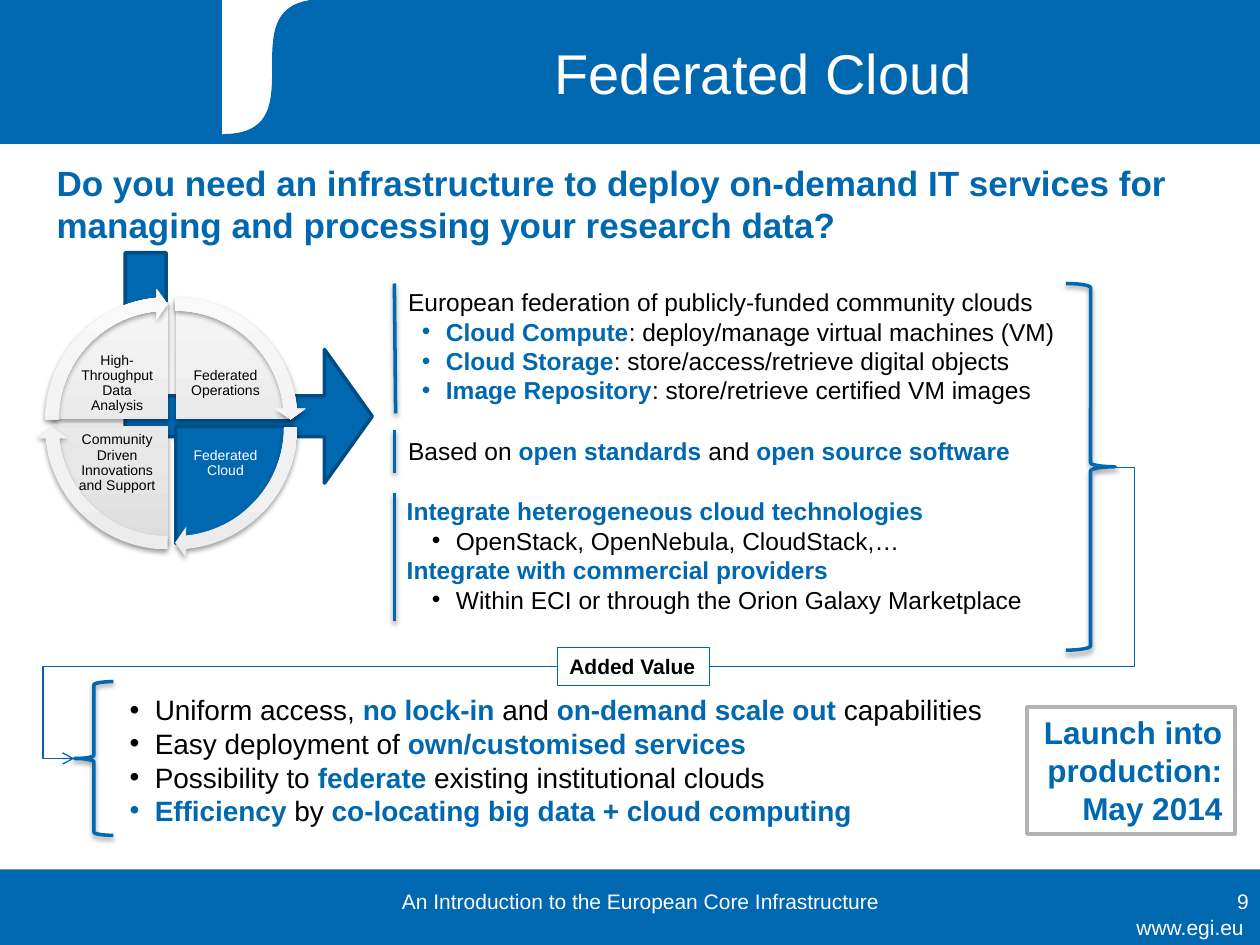
from dataclasses import dataclass

from lxml.etree import SubElement
from pptx import Presentation
from pptx.dml.color import RGBColor
from pptx.enum.shapes import MSO_CONNECTOR as CONN, MSO_SHAPE as SHAPE
from pptx.enum.text import MSO_ANCHOR as ANCHOR, PP_ALIGN as ALIGN
from pptx.oxml import parse_xml
from pptx.oxml.ns import nsdecls, qn
from pptx.util import Inches, Pt

COLORS = {"blue": "0067B1", "link": "0065AD", "navy": "004C83",
          "grey": "B3B3B3", "white": "FFFFFF", "black": "000000"}
WEDGE_GRADIENT = ((0, "DDDDDD"), (35, "E7E7E7"), (100, "F6F6F6"))
RING_GRADIENT = ((0, "ECECEC"), (35, "F1F1F1"), (100, "F9F9F9"))


@dataclass
class Wedge:
    label: str
    x: float
    y: float
    label_x: float
    label_y: float
    start: int  # angles in units of 100000/60000 degree
    end: int
    active: bool = False


@dataclass
class Block:
    lines: list
    x: float
    y: float
    w: float
    h: float
    size: int = 14
    indent: tuple = (0, 0)


def rgb(name: str) -> RGBColor:
    return RGBColor.from_string(COLORS[name])


def add_shadow(s) -> None:
    """Give a shape or connector a soft shadow straight below it."""
    effects = s._element.spPr.find(qn("a:effectLst"))
    if effects is None:
        effects = SubElement(s._element.spPr, qn("a:effectLst"))
    effects.append(parse_xml(
        f'<a:outerShdw {nsdecls("a")} blurRad="{Pt(3.1)}" dist="{Pt(1.6)}" dir="5400000" '
        'rotWithShape="0"><a:srgbClr val="000000"><a:alpha val="38000"/></a:srgbClr></a:outerShdw>'))


def style(s, fill=None, line=None, width=0.75, gradient=None, shadow=False):
    s.shadow.inherit = False
    if gradient:
        s.fill.gradient()
        stops = s._element.spPr.find(qn("a:gradFill")).find(qn("a:gsLst"))
        stops[:] = [parse_xml(f'<a:gs {nsdecls("a")} pos="{pos * 1000}"><a:srgbClr val="{color}"/></a:gs>')
                    for pos, color in gradient]
        s.fill.gradient_angle = 90
    elif fill:
        s.fill.solid()
        s.fill.fore_color.rgb = rgb(fill)
    else:
        s.fill.background()
    if line:
        s.line.color.rgb = rgb(line)
        s.line.width = Pt(width)
    else:
        s.line.fill.background()
    if shadow:
        add_shadow(s)
    return s


def add_shape(kind, x: float, y: float, w: float, h: float, adj=(), **fmt):
    s = slide.shapes.add_shape(kind, Inches(x), Inches(y), Inches(w), Inches(h))
    for i, value in enumerate(adj):
        s.adjustments[i] = value
    return style(s, **fmt)


def add_line(kind, x1: float, y1: float, x2: float, y2: float, color: str, width: float):
    c = slide.shapes.add_connector(kind, Inches(x1), Inches(y1), Inches(x2), Inches(y2))
    c.line.color.rgb = rgb(color)
    c.line.width = Pt(width)
    SubElement(c._element.spPr, qn("a:effectLst"))
    return c


def add_elbow(x1: float, y1: float, x2: float, y2: float, bend: float):
    c = add_line(CONN.ELBOW, x1, y1, x2, y2, "link", 0.75)
    guides = c._element.spPr.find(qn("a:prstGeom")).get_or_add_avLst()
    SubElement(guides, qn("a:gd"), name="adj1", fmla=f"val {round(bend * 100000)}")
    return c


def write(s, lines, size=14, color="black", bold=False, align=ALIGN.LEFT, anchor=ANCHOR.TOP,
          indent=(0, 0), inset=None, spacing=None, wrap=True) -> None:
    """Write paragraphs: *stars* mark bold blue text, a leading • makes a bullet."""
    tf = s.text_frame
    tf.word_wrap, tf.vertical_anchor = wrap, anchor
    if inset is not None:
        tf.margin_left = tf.margin_right = tf.margin_top = tf.margin_bottom = Inches(inset)
    for i, line in enumerate([lines] if isinstance(lines, str) else lines):
        p = tf.paragraphs[0] if i == 0 else tf.add_paragraph()
        if line.startswith("•"):
            pPr = p._p.get_or_add_pPr()
            pPr.set("marL", str(Inches(indent[0])))
            pPr.set("indent", str(Inches(indent[1])))
            SubElement(pPr, qn("a:buFont"), typeface="Arial")
            SubElement(pPr, qn("a:buChar"), char="•")
        p.alignment = align
        if spacing:
            p.line_spacing = spacing
        for j, part in enumerate(line.lstrip("•").split("*")):
            if part:
                r = p.add_run()
                r.text = part
                r.font.name, r.font.size = "Arial", Pt(size)
                r.font.bold = bold or j % 2 == 1
                r.font.color.rgb = rgb("blue" if j % 2 else color)


def add_text(lines, x: float, y: float, w: float, h: float, **fmt) -> None:
    write(slide.shapes.add_textbox(Inches(x), Inches(y), Inches(w), Inches(h)), lines, **fmt)


def bezier(p0, p1, p2, p3, steps=40):
    for t in (i / steps for i in range(steps + 1)):
        yield tuple((1 - t) ** 3 * a + 3 * (1 - t) ** 2 * t * b + 3 * (1 - t) * t ** 2 * c + t ** 3 * d
                    for a, b, c, d in zip(p0, p1, p2, p3))


prs = Presentation()
prs.slide_width, prs.slide_height = Inches(10), Inches(7.5)
slide = prs.slides.add_slide(prs.slide_layouts[5])

# Header with its white curve, and footer band
add_shape(SHAPE.RECTANGLE, 0, 6.9, 10, 0.6, fill="blue")
add_shape(SHAPE.RECTANGLE, 0, 0, 10, 1.14, fill="blue", line="blue")
add_shape(SHAPE.RECTANGLE, 1.77, 0, 1.97, 1.07, fill="white", line="white")
curve = list(bezier((1.77, 1.07), (2.56, 1.07), (1.77, 0), (2.56, 0)))
builder = slide.shapes.build_freeform(Inches(3.74), 0, scale=1.0)
builder.add_line_segments([(Inches(x), Inches(y)) for x, y in [(3.74, 1.07)] + curve])
style(builder.convert_to_shape(), fill="blue", line="blue")

# Title
title = slide.shapes.title
title.left, title.top, title.width, title.height = map(Inches, (2.32, 0.13, 7.48, 0.95))
write(title, "Federated Cloud", size=32, color="white", align=ALIGN.CENTER,
      anchor=ANCHOR.MIDDLE, spacing=0.9)
slide.shapes._spTree.append(title._element)  # in front of the header

# Footer text
footer = dict(size=12, color="white", anchor=ANCHOR.MIDDLE)
add_text("www.egi.eu", 8.39, 7.2, 1.58, 0.31, align=ALIGN.RIGHT, **footer)
add_text("9", 7.68, 6.95, 2.33, 0.4, align=ALIGN.RIGHT, **footer)
add_text("An Introduction to the European Core Infrastructure", 2.8, 6.95, 4.57, 0.4,
         align=ALIGN.CENTER, **footer)

# Question and text blocks
BLOCKS = [
    Block(["*Do you need an infrastructure to deploy on-demand IT services for managing and "
           "processing your research data?*"], 0.35, 1.23, 9.21, 0.77, size=20),
    Block(["European federation of publicly-funded community clouds",
           "•*Cloud Compute*: deploy/manage virtual machines (VM)",
           "•*Cloud Storage*: store/access/retrieve digital objects",
           "•*Image Repository*: store/retrieve certified VM images"],
          3.14, 2.23, 5.52, 1.04, indent=(0.3, -0.19)),
    Block(["Based on *open standards* and *open source software*"], 3.14, 3.41, 5.52, 0.34),
    Block(["*Integrate heterogeneous cloud technologies*",
           "•OpenStack, OpenNebula, CloudStack,…",
           "*Integrate with commercial providers*",
           "•Within ECI or through the Orion Galaxy Marketplace"],
          3.13, 3.89, 5.53, 1.04, indent=(0.39, -0.19)),
    Block(["•Uniform access, *no lock-in *and *on-demand scale out *capabilities",
           "•Easy deployment of *own/customised services*",
           "•Possibility to *federate *existing institutional clouds",
           "•*Efficiency *by *co-locating big data + cloud computing*"],
          0.93, 5.45, 8.19, 1.18, size=16, indent=(0.2, -0.2)),
]
for b in BLOCKS:
    add_text(b.lines, b.x, b.y, b.w, b.h, size=b.size, indent=b.indent)
for x2, top, bottom in ((3.14, 2.25, 3.28), (3.13, 3.41, 3.75), (3.13, 3.91, 4.93)):
    add_shadow(add_line(CONN.STRAIGHT, 3.13, top, x2, bottom, "blue", 2))

# Bent arrow behind the wheel
arrow = add_shape(SHAPE.BENT_UP_ARROW, 1.06, 1.94, 1.83, 1.96, adj=(0.177, 0.29, 0.207),
                  fill="blue", line="navy", width=2)
arrow.rotation = 270
for flip in ("flipH", "flipV"):
    arrow._element.spPr.find(qn("a:xfrm")).set(flip, "1")

# Wheel of four wedges, then the ring of arrows
WEDGES = [
    Wedge("Federated Operations", 0.47, 2.4, 1.45, 2.79, 162, 0),
    Wedge("Federated Cloud", 0.47, 2.46, 1.45, 3.42, 0, 54, active=True),
    Wedge("Community Driven Innovations and Support", 0.41, 2.46, 0.59, 3.42, 54, 108),
    Wedge("High-Throughput Data Analysis", 0.41, 2.4, 0.59, 2.79, 108, 162),
]
for w in WEDGES:
    look = (dict(fill="blue", line="navy", width=2) if w.active
            else dict(gradient=WEDGE_GRADIENT, shadow=True))
    add_shape(SHAPE.PIE, w.x, w.y, 1.85, 1.85, adj=(w.start, w.end), **look)
    add_text(w.label, w.label_x, w.label_y, 0.68, 0.51, size=8, align=ALIGN.CENTER,
             color="white" if w.active else "black", anchor=ANCHOR.MIDDLE, inset=0.01, spacing=0.9)
for w in WEDGES:
    add_shape(SHAPE.CIRCULAR_ARROW, w.x - 0.12, w.y - 0.11, 2.08, 2.08,
              adj=(0.051, 3.275, (w.end or 216) - 3.275, w.start, 0.059),
              gradient=RING_GRADIENT, shadow=True)

# Braces and the path through "Added Value"
add_shape(SHAPE.RIGHT_BRACE, 8.46, 2.25, 0.39, 2.91, line="blue", width=2, shadow=True)
add_shape(SHAPE.LEFT_BRACE, 0.59, 5.41, 0.31, 1.22, line="blue", width=2, shadow=True)
add_elbow(8.86, 3.71, 5.63, 5.29, bend=-0.045)
to_values = add_elbow(4.42, 5.29, 0.59, 6.02, bend=1.065)
SubElement(to_values.line._get_or_add_ln(), qn("a:tailEnd"), type="arrow")
added = add_shape(SHAPE.RECTANGLE, 4.42, 5.14, 1.21, 0.3, fill="white", line="blue", width=0.25)
write(added, "Added Value", size=12, bold=True, wrap=False)

# Launch note
launch = add_shape(SHAPE.RECTANGLE, 8.15, 5.61, 1.65, 1.01, fill="white", line="grey", width=2)
write(launch, "*Launch into production: May 2014*", size=18, align=ALIGN.RIGHT)

prs.save("out.pptx")
